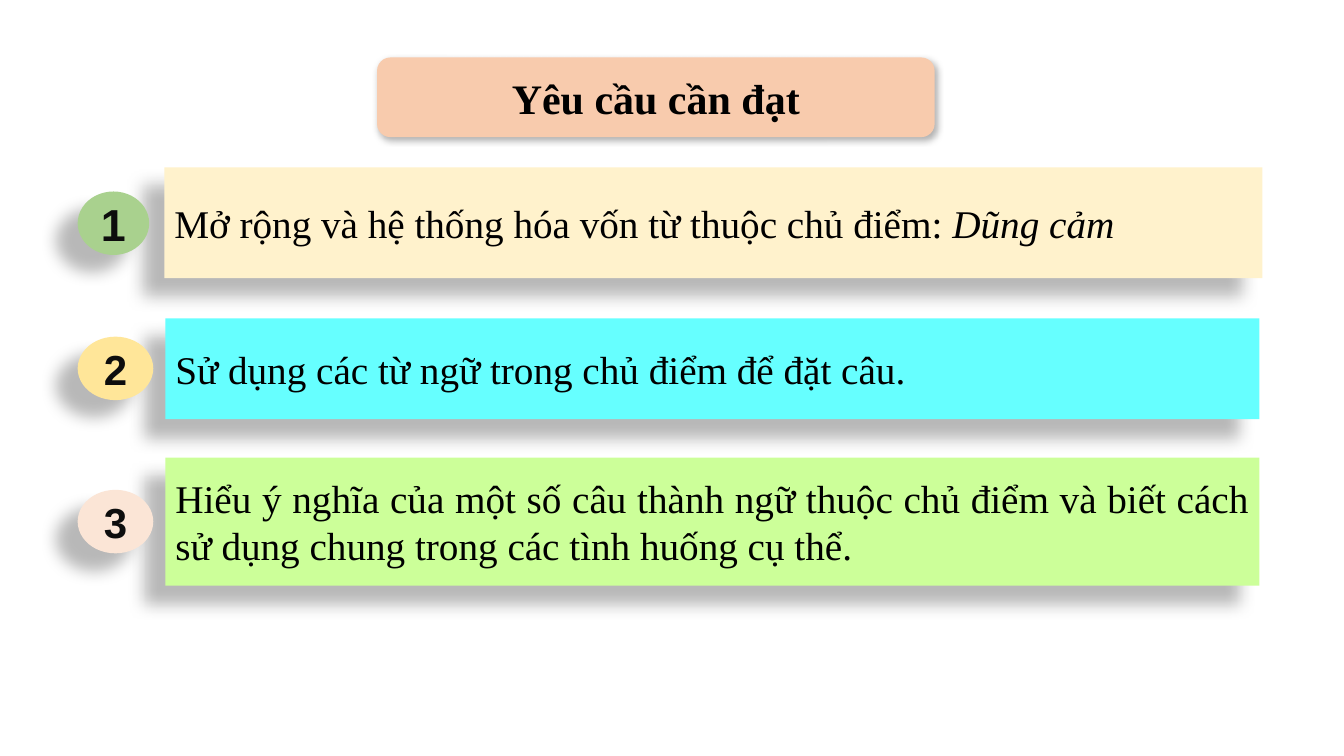
import dataclasses

import lxml.etree
import pptx
import pptx.dml.color
import pptx.enum.shapes
import pptx.enum.text
import pptx.oxml.ns
import pptx.util

Inches = pptx.util.Inches
Shapes = pptx.enum.shapes.MSO_SHAPE
Align = pptx.enum.text.PP_ALIGN


@dataclasses.dataclass(frozen=True)
class Theme:
    ink: str = "000000"
    number_ink: str = "0D0D0D"
    heading_fill: str = "F8CBAD"
    text_font: str = "Times New Roman"
    number_font: str = "Arial"
    heading_size: int = 30
    text_size: int = 28
    heading_shadow: tuple = (30, 4.5, 2.6, 53)
    row_shadow: tuple = (28, 11.8, 19.7, 141)


THEME = Theme()

ROWS = [
    {
        "box": (0.77, 1.66, 11.75, 1.1),
        "badge": (0.71, 0.24),
        "gap": 0.15,
        "fills": ("FFF2CC", "A9D18E"),
        "number": ("1", 32),
        "spans": [
            ("Mở rộng và hệ thống hóa vốn từ thuộc chủ điểm: ", False),
            ("Dũng cảm", True),
        ],
    },
    {
        "box": (0.77, 3.16, 11.72, 1),
        "badge": (0.75, 0.18),
        "gap": 0.12,
        "fills": ("66FFFF", "FFE699"),
        "number": ("2", 30),
        "spans": [("Sử dụng các từ ngữ trong chủ điểm để đặt câu.", False)],
    },
    {
        "box": (0.77, 4.54, 11.72, 1.27),
        "badge": (0.75, 0.32),
        "gap": 0.12,
        "fills": ("CCFF99", "FBE5D6"),
        "number": ("3", 30),
        "spans": [
            (
                "Hiểu ý nghĩa của một số câu thành ngữ thuộc chủ điểm và biết cách "
                "sử dụng chung trong các tình huống cụ thể.",
                False,
            )
        ],
    },
]


def apply(target, values):
    for name, value in values.items():
        setattr(target, name, value)


def rgb(color):
    return pptx.dml.color.RGBColor.from_string(color)


def add_shadow(shape, shadow):
    opacity, blur, distance, angle = shadow
    qn = pptx.oxml.ns.qn
    shape.shadow.inherit = False
    effects = shape.element.spPr.find(qn("a:effectLst"))
    outer = lxml.etree.SubElement(
        effects,
        qn("a:outerShdw"),
        blurRad=str(pptx.util.Pt(blur)),
        dist=str(pptx.util.Pt(distance)),
        dir=str(angle * 60000),
        algn="tl",
        rotWithShape="0",
    )
    color = lxml.etree.SubElement(outer, qn("a:srgbClr"), val=THEME.ink)
    lxml.etree.SubElement(color, qn("a:alpha"), val=str(opacity * 1000))


def add_panel(shapes, kind, box, fill, shadow):
    panel = shapes.add_shape(kind, *map(Inches, box))
    panel.fill.solid()
    panel.fill.fore_color.rgb = rgb(fill)
    panel.line.fill.background()
    add_shadow(panel, shadow)
    return panel


def write(shape, spans, align, color, font):
    frame = shape.text_frame
    apply(frame, {
        "word_wrap": True,
        "auto_size": pptx.enum.text.MSO_AUTO_SIZE.NONE,
        "vertical_anchor": pptx.enum.text.MSO_ANCHOR.MIDDLE,
    })
    para = frame.paragraphs[0]
    para.alignment = align
    for text, italic in spans:
        span = para.add_run()
        span.text = text
        apply(span.font, {**font, "italic": italic})
        span.font.color.rgb = rgb(color)


def add_heading(page, box, text):
    add_panel(page.shapes, Shapes.ROUNDED_RECTANGLE, box,
              THEME.heading_fill, THEME.heading_shadow)
    title = page.shapes.title
    apply(title, dict(zip(("left", "top", "width", "height"), map(Inches, box))))
    title.element.getparent().append(title.element)
    write(title, [(text, False)], Align.CENTER, THEME.ink, {
        "name": THEME.text_font,
        "size": pptx.util.Pt(THEME.heading_size),
        "bold": True,
    })


def add_row(page, row):
    left, top, width, height = row["box"]
    badge_width, badge_drop = row["badge"]
    bar_offset = badge_width + row["gap"]
    bar_fill, badge_fill = row["fills"]
    number, number_size = row["number"]
    group = page.shapes.add_group_shape()

    bar_box = (left + bar_offset, top, width - bar_offset, height)
    bar = add_panel(group.shapes, Shapes.RECTANGLE, bar_box, bar_fill, THEME.row_shadow)
    write(bar, row["spans"], Align.JUSTIFY, THEME.ink, {
        "name": THEME.text_font,
        "size": pptx.util.Pt(THEME.text_size),
    })

    badge_box = (left, top + badge_drop, badge_width, 0.63)
    badge = add_panel(group.shapes, Shapes.OVAL, badge_box, badge_fill, THEME.row_shadow)
    write(badge, [(number, False)], Align.CENTER, THEME.number_ink, {
        "name": THEME.number_font,
        "size": pptx.util.Pt(number_size),
        "bold": True,
    })


def main():
    deck = pptx.Presentation()
    apply(deck, {"slide_width": Inches(13.33), "slide_height": Inches(7.5)})
    page = deck.slides.add_slide(deck.slide_layouts.get_by_name("Title Only"))
    add_heading(page, (3.74, 0.57, 5.53, 0.79), "Yêu cầu cần đạt")
    for row in ROWS:
        add_row(page, row)
    deck.save("out.pptx")


if __name__ == "__main__":
    main()
